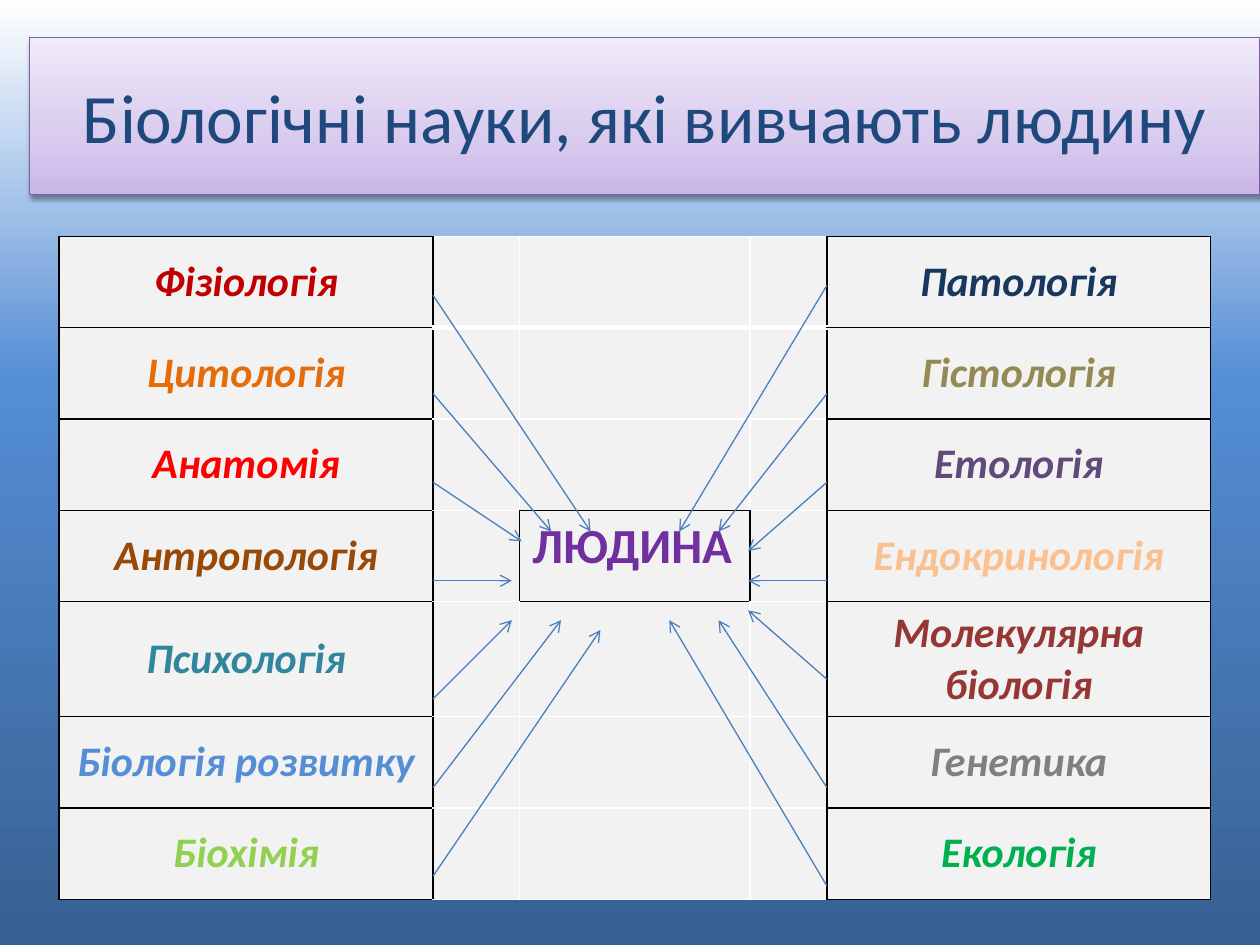
from lxml import etree
from pptx import Presentation
from pptx.dml.color import RGBColor
from pptx.enum.shapes import MSO_CONNECTOR as Line, MSO_SHAPE as Shape
from pptx.enum.text import MSO_ANCHOR as Anchor, PP_ALIGN as Align
from pptx.oxml import parse_xml
from pptx.oxml.ns import nsdecls, qn
from pptx.util import Inches, Pt

color = RGBColor.from_string


def set_gradient(fill, parent, stops, angle):
    fill.gradient()
    grad = next(parent.iter(qn("a:gradFill")))
    stop_list = grad.find(qn("a:gsLst"))
    for old in list(stop_list):
        stop_list.remove(old)
    for share, tone in stops:
        stop = etree.SubElement(stop_list, qn("a:gs"), pos=str(share * 1000))
        etree.SubElement(stop, qn("a:srgbClr"), val=tone)
    grad.find(qn("a:lin")).set("ang", str(angle * 60000))


def write(frame, words, size, tone, align, bold=False, italic=False):
    paragraph = frame.paragraphs[0]
    paragraph.alignment = align
    run = paragraph.add_run()
    run.text = words
    font = run.font
    font.name, font.size, font.bold, font.italic = "Calibri", Pt(size), bold, italic
    font.color.rgb = color(tone)


deck = Presentation()
deck.slide_width, deck.slide_height = Inches(10), Inches(7.5)
slide = deck.slides.add_slide(deck.slide_layouts[6])
unit = deck.slide_width / 128  # grid of 128 columns by 96 rows

# Background
set_gradient(slide.background.fill, slide.element,
             [(0, "FFFFFF"), (40, "558ED5"), (100, "376092")], 90)

# Title banner
banner = slide.shapes.add_shape(
    Shape.RECTANGLE, *[int(n * unit) for n in (3, 3.8, 125, 16)])
set_gradient(banner.fill, banner._element,
             [(0, "C9B5E8"), (35, "D8CBEE"), (100, "F0EAF9")], 270)
banner.line.color.rgb = color("7D60A0")
banner.line.width = Pt(0.75)
banner.shadow.inherit = False
banner._element.spPr.find(qn("a:effectLst")).append(parse_xml(
    f'<a:outerShdw {nsdecls("a")} blurRad="{Pt(3.1)}" dist="{Pt(1.6)}" dir="5400000"'
    ' rotWithShape="0"><a:srgbClr val="000000"><a:alpha val="38000"/></a:srgbClr>'
    '</a:outerShdw>'))
banner.text_frame.word_wrap = True
banner.text_frame.vertical_anchor = Anchor.MIDDLE
write(banner.text_frame, "Біологічні науки, які вивчають людину", 39.6, "1F497D",
      Align.CENTER)

# Sciences on both sides, the human in the middle
left_sciences = [
    ("Фізіологія", "C00000"), ("Цитологія", "E46C0A"), ("Анатомія", "FF0000"),
    ("Антропологія", "984807"), ("Психологія", "31859C"),
    ("Біологія розвитку", "558ED5"), ("Біохімія", "92D050")]
right_sciences = [
    ("Патологія", "17375E"), ("Гістологія", "948A54"), ("Етологія", "604A7B"),
    ("Ендокринологія", "FAC090"), ("Молекулярна біологія", "953735"),
    ("Генетика", "808080"), ("Екологія", "00B050")]
human = (3, 2)
sciences = {}
for row, (left, right) in enumerate(zip(left_sciences, right_sciences)):
    sciences[row, 0], sciences[row, 4] = left, right
boxed = {human, *sciences}

widths = [38, 8.8, 23.4, 7.8, 39]
row_height = 9.28
row_count = len(left_sciences)
table = slide.shapes.add_table(
    row_count, len(widths), int(6 * unit), int(24 * unit),
    int(sum(widths) * unit), int(row_count * row_height * unit)).table
for column, width in zip(table.columns, widths):
    column.width = int(width * unit)
for table_row in table.rows:
    table_row.height = int(row_height * unit)

sides = {"L": (0, -1), "R": (0, 1), "T": (-1, 0), "B": (1, 0)}
for row in range(row_count):
    for col in range(len(widths)):
        place = row, col
        cell = table.cell(row, col)
        # An edge is black where it touches a boxed cell
        for side, (down, across) in sides.items():
            black = place in boxed or (row + down, col + across) in boxed
            weight = 3 if side == "B" and row == 0 and not black else 1
            edge = etree.SubElement(cell._tc.get_or_add_tcPr(), qn(f"a:ln{side}"),
                                    w=str(Pt(weight)))
            paint = etree.SubElement(edge, qn("a:solidFill"))
            etree.SubElement(paint, qn("a:srgbClr"),
                             val="000000" if black else "FFFFFF")
        cell.fill.solid()
        cell.fill.fore_color.rgb = color("F2F2F2")
        if place in sciences:
            cell.vertical_anchor = Anchor.MIDDLE
            name, tone = sciences[place]
            write(cell.text_frame, name, 24, tone, Align.CENTER, True, True)
        elif place == human:
            write(cell.text_frame, "ЛЮДИНА", 28, "7030A0", Align.LEFT, True)

# Arrows: start row, then tip column and row
left_arrows = [(30, 60, 54), (40, 56, 54), (49, 53, 55), (59, 52, 59),
               (71, 52, 63), (80, 57, 63), (89, 61, 64)]
right_arrows = [(29, 69, 54), (40, 73, 54), (49, 76, 56), (59, 76, 59),
                (69, 76, 62), (80, 73, 63), (90, 68, 63)]
for start_col, arrows in ((44, left_arrows), (84, right_arrows)):
    for start_row, tip_col, tip_row in arrows:
        arrow = slide.shapes.add_connector(
            Line.STRAIGHT,
            *[int(n * unit) for n in (start_col, start_row, tip_col, tip_row)])
        arrow.line.color.rgb = color("4B7EBC")
        arrow.line.width = Pt(0.75)
        etree.SubElement(arrow.line._get_or_add_ln(), qn("a:tailEnd"), type="arrow")
        etree.SubElement(arrow._element.spPr, qn("a:effectLst"))

deck.save("out.pptx")
